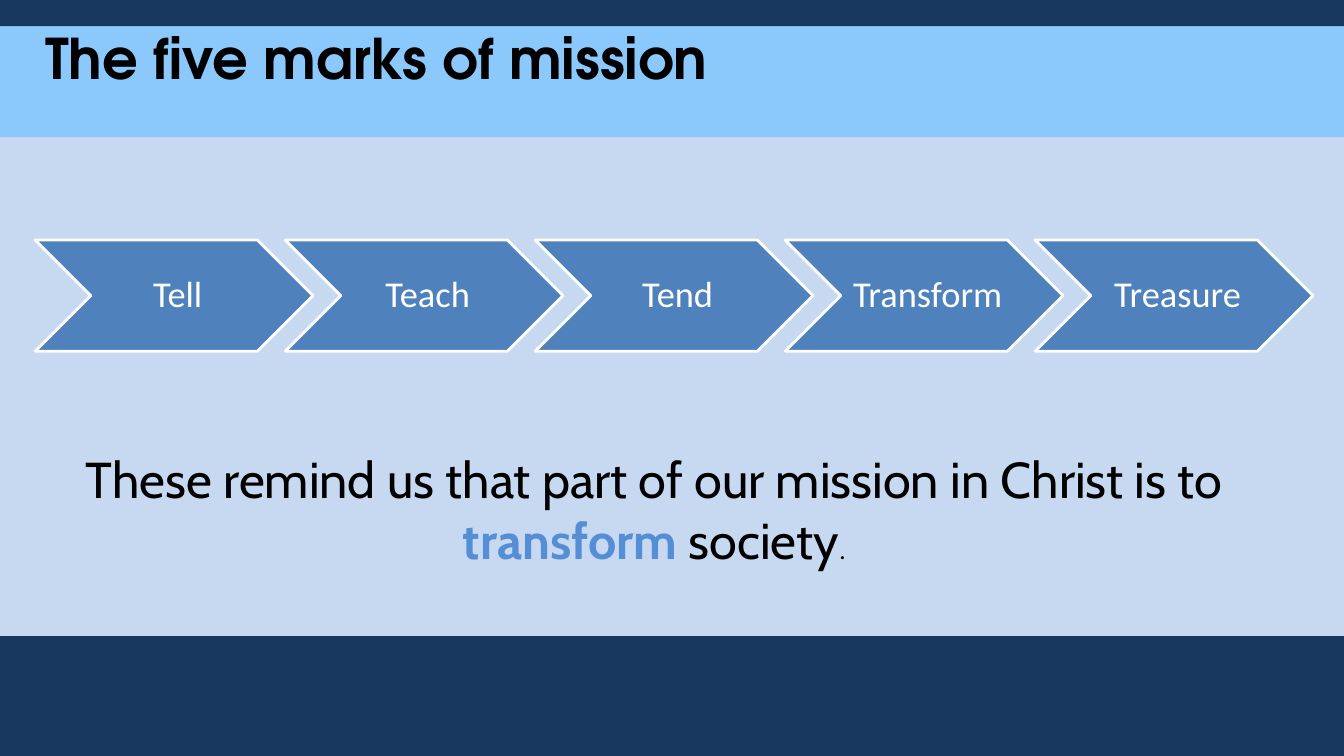
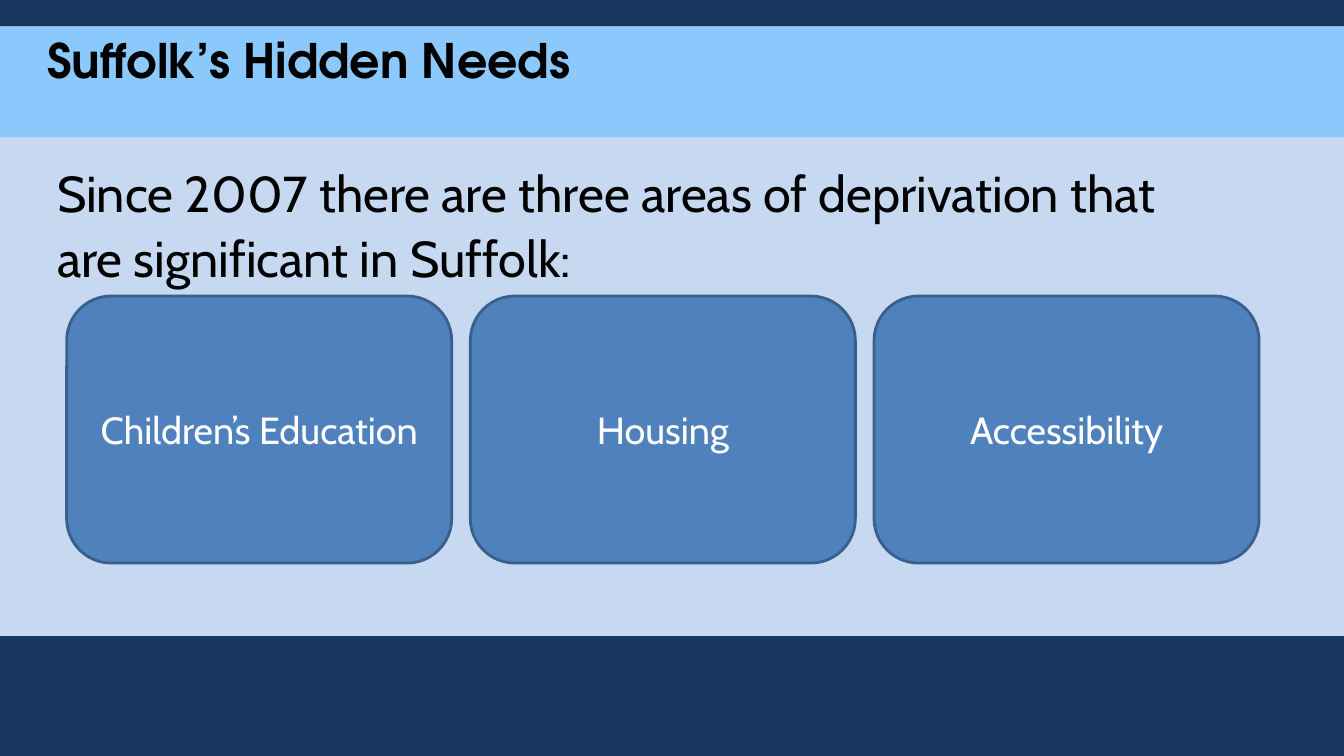
import pptx
import pptx.util
import pptx.dml.color
import pptx.enum.shapes
import pptx.enum.text

Cm = pptx.util.Cm
Pt = pptx.util.Pt
Shape = pptx.enum.shapes.MSO_SHAPE
Align = pptx.enum.text.PP_ALIGN
Anchor = pptx.enum.text.MSO_ANCHOR

WIDE, HIGH = 33.87, 19.05
COLORS = {
    "page": "C6D9F1",
    "band": "8BC9FD",
    "navy": "17375E",
    "blue": "4F81BD",
    "edge": "3A5F8C",
    "accent": "558ED5",
    "white": "FFFFFF",
    "black": "000000",
}
HEAD, BODY, LABEL = "TeX Gyre Adventor", "Cabin", "Calibri"
BANDS = [("band", 0.46, 3.0), ("navy", 0, 0.66), ("navy", 16.03, 3.02)]


def color(name):
    return pptx.dml.color.RGBColor.from_string(COLORS[name])


def style(font, face, size, tint="black", bold=False):
    font.name, font.size, font.bold = face, Pt(size), bold
    font.color.rgb = color(tint)


def add_form(slide, kind, box, fill, line=None):
    form = slide.shapes.add_shape(kind, *map(Cm, box))
    form.shadow.inherit = False
    form.fill.solid()
    form.fill.fore_color.rgb = color(fill)
    if line:
        form.line.color.rgb = color(line)
        form.line.width = Pt(2)
    else:
        form.line.fill.background()
    return form


def add_text(slide, box):
    """Add a wrapping text box and return its first paragraph."""
    frame = slide.shapes.add_textbox(*map(Cm, box)).text_frame
    frame.word_wrap = True
    return frame.paragraphs[0]


def add_page(deck, title, box, size):
    """Add a slide with the shared background, bands and title."""
    slide = deck.slides.add_slide(deck.slide_layouts[6])
    slide.background.fill.solid()
    slide.background.fill.fore_color.rgb = color("page")
    for fill, top, high in BANDS:
        add_form(slide, Shape.RECTANGLE, (0, top, WIDE, high), fill)
    para = add_text(slide, box)
    para.text = title
    style(para.font, HEAD, size, bold=True)
    return slide, para


def add_row(slide, box, kind, labels, gap, line, face, size):
    """Fill the box with equal labelled shapes; a negative gap overlaps them."""
    left, top, wide, high = box
    each = (wide - gap * (len(labels) - 1)) / len(labels)
    for i, label in enumerate(labels):
        spot = (left + i * (each + gap), top, each, high)
        frame = add_form(slide, kind, spot, "blue", line).text_frame
        frame.word_wrap = False
        frame.vertical_anchor = Anchor.MIDDLE
        para = frame.paragraphs[0]
        para.text = label
        para.alignment = Align.CENTER
        style(para.font, face, size, "white")
        yield frame


def add_marks(deck):
    slide, _ = add_page(deck, "The five marks of mission",
                        (0.89, 0.46, 31.8, 1.57), 40)
    para = add_text(slide, (1.3, 11.18, 30.38, 4.11))
    para.alignment = Align.CENTER
    for text, face, size, tint, bold in [
        ("These remind us that part of our mission in Christ is to ",
         BODY, 36, "black", False),
        ("transform ", BODY, 36, "accent", True),
        ("society", BODY, 36, "black", False),
        (".", LABEL, 18, "black", False),
    ]:
        run = para.add_run()
        run.text = text
        style(run.font, face, size, tint, bold)
    marks = ["Tell", "Teach", "Tend", "Transform", "Treasure"]
    for frame in add_row(slide, (0.89, 6.05, 32.2, 2.8), Shape.CHEVRON,
                         marks, -0.7, "white", LABEL, 26):
        frame.margin_left = Cm(0.28)
        frame.margin_right = frame.margin_top = frame.margin_bottom = Cm(0.1)
        frame.paragraphs[0].line_spacing = 0.9


def add_needs(deck):
    slide, title = add_page(deck, "Suffolk’s Hidden Needs",
                            (0.94, 0.81, 31.8, 1.57), 34)
    title.line_spacing = 0.9
    para = add_text(slide, (1.19, 3.86, 29.74, 3.4))
    para.text = ("Since 2007 there are three areas of deprivation that "
                 "are significant in Suffolk:")
    para.line_spacing = 1.07
    para.space_after = Pt(8)
    style(para.font, BODY, 36)
    needs = ["Children’s Education", "Housing", "Accessibility"]
    for frame in add_row(slide, (1.68, 7.46, 30.05, 6.73),
                         Shape.ROUNDED_RECTANGLE, needs, 0.47,
                         "edge", BODY, 27):
        frame.word_wrap = True


def main():
    deck = pptx.Presentation()
    deck.slide_width, deck.slide_height = Cm(WIDE), Cm(HIGH)
    add_marks(deck)
    add_needs(deck)
    deck.save("out.pptx")


if __name__ == "__main__":
    main()
